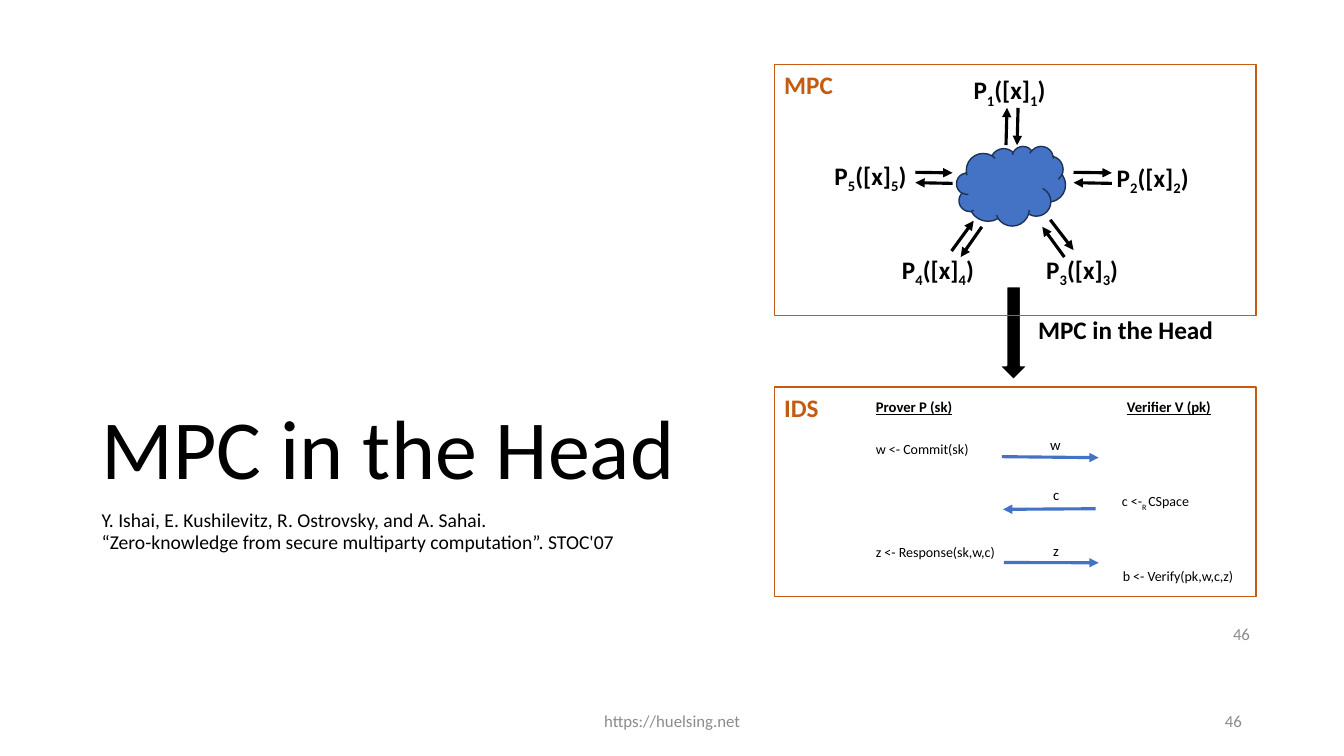
from lxml import etree
from pptx import Presentation
from pptx.dml.color import RGBColor
from pptx.enum import shapes, text
from pptx.oxml.ns import qn
from pptx.util import Pt

COLORS = {"black": "000000", "white": "FFFFFF", "gray": "8C8C8C",
          "blue": "4472C4", "navy": "1E3256", "orange": "C55A11"}


class SlideBuilder:
    """Holds the slide and its style, and adds each kind of element."""
    font = "Calibri"

    def __init__(self, slide):
        self.slide = slide

    def color(self, name):
        return RGBColor.from_string(COLORS[name])

    def fill_text(self, frame, content, size, color="black", bold=False, underline=False,
                  align="LEFT", anchor="TOP", spacing=None, insets=(7.2, 3.6)):
        """Lines split at a newline; text between underscores is subscript."""
        frame.word_wrap = True
        frame.auto_size = text.MSO_AUTO_SIZE.NONE
        frame.vertical_anchor = text.MSO_ANCHOR[anchor]
        frame.margin_left = frame.margin_right = Pt(insets[0])
        frame.margin_top = frame.margin_bottom = Pt(insets[1])
        paragraph = frame.paragraphs[0]
        paragraph.alignment = text.PP_ALIGN[align]
        paragraph.line_spacing = spacing
        for number, line in enumerate(content.split("\n")):
            if number:
                paragraph.add_line_break()
            for index, part in enumerate(line.split("_")):
                if not part:
                    continue
                run = paragraph.add_run()
                run.text = part
                font = run.font
                font.name, font.size, font.bold = self.font, Pt(size), bold
                font.underline = underline
                font.color.rgb = self.color(color)
                if index % 2:
                    run._r.get_or_add_rPr().set("baseline", "-25000")

    def title(self, content, left, top, width, height, size, **style):
        shape = self.slide.shapes.title
        shape.left, shape.top = Pt(left), Pt(top)
        shape.width, shape.height = Pt(width), Pt(height)
        self.fill_text(shape.text_frame, content, size, **style)

    def label(self, content, left, top, width, height, size, **style):
        box = self.slide.shapes.add_textbox(Pt(left), Pt(top), Pt(width), Pt(height))
        self.fill_text(box.text_frame, content, size, **style)

    def shape(self, kind, left, top, width, height, fill, line, weight=1):
        shape = self.slide.shapes.add_shape(
            shapes.MSO_SHAPE[kind], Pt(left), Pt(top), Pt(width), Pt(height))
        shape.shadow.inherit = False
        if fill:
            shape.fill.solid()
            shape.fill.fore_color.rgb = self.color(fill)
        else:
            shape.fill.background()
        shape.line.color.rgb = self.color(line)
        shape.line.width = Pt(weight)

    def arrow(self, start, end, color):
        connector = self.slide.shapes.add_connector(
            shapes.MSO_CONNECTOR.STRAIGHT, *(Pt(value) for value in start + end))
        connector.line.color.rgb = self.color(color)
        connector.line.width = Pt(2.25)
        etree.SubElement(connector.line._get_or_add_ln(), qn("a:tailEnd"), type="triangle")
        etree.SubElement(connector._element.spPr, qn("a:effectLst"))


def main():
    presentation = Presentation()
    presentation.slide_width, presentation.slide_height = Pt(960), Pt(540)
    slide = presentation.slides.add_slide(presentation.slide_layouts[5])
    builder = SlideBuilder(slide)

    # Title and reference
    builder.title("MPC in the Head", 65.5, 134.6, 828, 224.6, 60,
                  anchor="BOTTOM", spacing=0.9)
    builder.label("Y. Ishai, E.\u00a0Kushilevitz, R. Ostrovsky, and A. Sahai. \n"
                  "“Zero-knowledge\u00a0from secure multiparty computation”. STOC'07",
                  65.5, 361.4, 828, 118, 14, spacing=0.9)

    # MPC parties around the cloud
    parties = [(1, 688.3, 49.7), (2, 790.6, 112.3), (3, 740.2, 177.8),
               (4, 637.2, 177.8), (5, 589, 110.9)]
    for number, left, top in parties:
        builder.label(f"P_{number}_([x]_{number}_)", left, top, 69.1, 29, 18, bold=True)
    builder.shape("CLOUD", 683.3, 104.4, 77.8, 56.9, "blue", "navy")
    exchanges = [
        ((727.2, 77), (726.5, 103.7)), ((718.6, 103.7), (719.3, 77)),
        ((766.8, 123.1), (794.2, 123.5)), ((794.2, 131), (766.8, 130.5)),
        ((750.2, 157), (766.8, 178.6)), ((760.3, 183.6), (744.5, 162)),
        ((679.7, 179.3), (695.5, 157.7)), ((701.3, 162), (686.2, 183.6)),
        ((653.8, 123.1), (680.4, 123.5)), ((680.4, 131), (653.8, 130.5)),
    ]
    for start, end in exchanges:
        builder.arrow(start, end, "black")

    # Identification scheme: headings and steps
    for heading, left in (("Prover P (sk)", 616.3), ("Verifier V (pk)", 795.6)):
        builder.label(heading, left, 279.4, 98.6, 36, 10.5, bold=True,
                      underline=True, insets=(9.4, 5))
    steps = [("w <- Commit(sk)", 618.5, 311), ("c <-_R _CSpace", 794.2, 348.5),
             ("z <- Response(sk,w,c)", 618.5, 384.5), ("b <- Verify(pk,w,c,z)", 794.9, 401.8)]
    for step, left, top in steps:
        builder.label(step, left, top, 104.4, 32, 10)

    # Messages between prover and verifier
    messages = [("w", 740.9, 306, (715.7, 326.2), (784.8, 326.9)),
                ("c", 743, 342, (782.6, 363.4), (716.4, 363.8)),
                ("z", 743, 382.3, (717.1, 401.8), (784.8, 402))]
    for message, left, top, start, end in messages:
        builder.arrow(start, end, "blue")
        builder.label(message, left, top, 18.7, 23, 10.5, insets=(9.4, 5))

    # Transformation arrow
    builder.shape("DOWN_ARROW", 713.5, 204.5, 20.9, 67, "black", "white", 1.5)
    builder.label("MPC in the Head", 734.4, 221, 203.8, 29, 18, bold=True)

    # Frames with their names
    for name, top, height in (("MPC", 46.1, 179.3), ("IDS", 276.5, 149.8)):
        builder.label(name, 553, top, 87.1, 29, 18, color="orange", bold=True)
        builder.shape("RECTANGLE", 553, top, 344.2, height, None, "orange")

    # Footer and slide numbers
    footers = [("46", 684, 438.5, 216, "RIGHT"), ("46", 678.2, 500.4, 216, "RIGHT"),
               ("https://huelsing.net", 318.2, 500.4, 324, "CENTER")]
    for content, left, top, width, align in footers:
        builder.label(content, left, top, width, 28.8, 12, color="gray",
                      align=align, anchor="MIDDLE")

    presentation.save("out.pptx")


if __name__ == "__main__":
    main()
